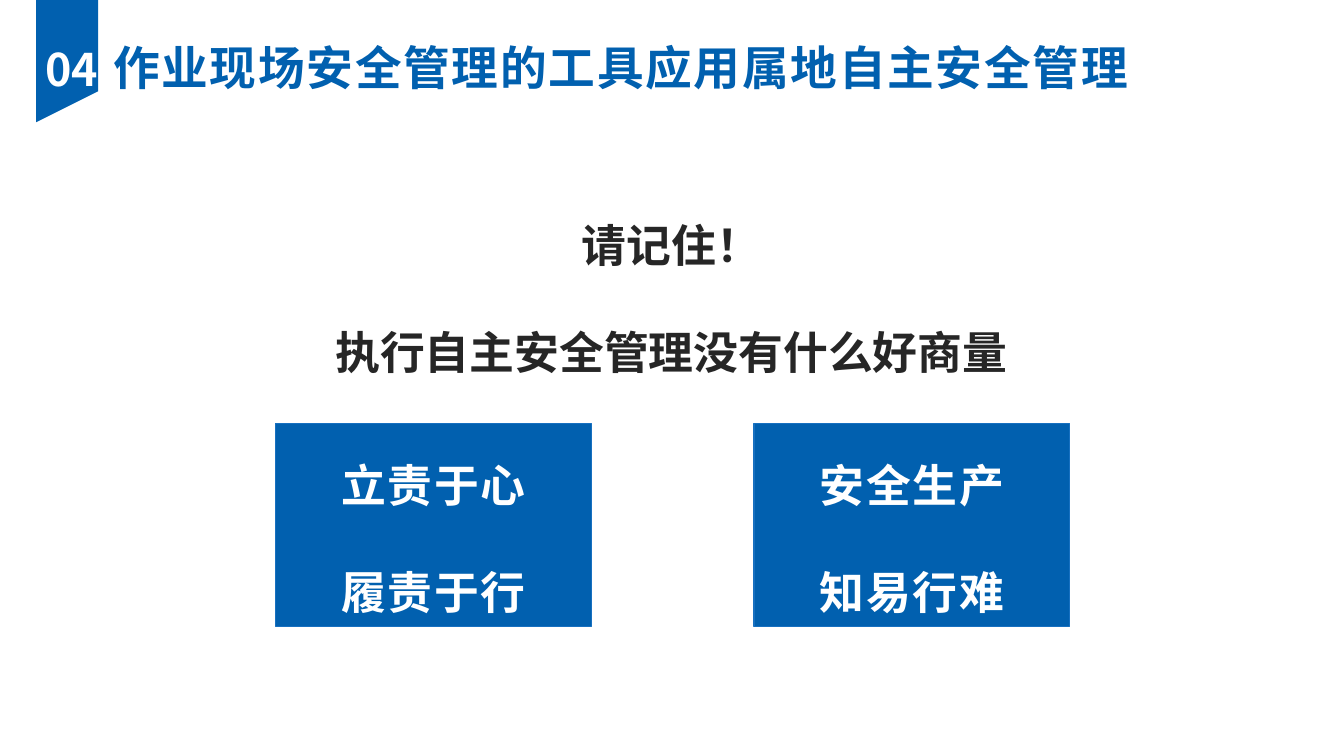
import pptx
import pptx.util
import pptx.dml.color
import pptx.enum.shapes
import pptx.enum.text
import pptx.oxml.ns
import lxml.etree

Inches = pptx.util.Inches
FONT = "Noto Sans CJK SC"
COLORS = {"blue": "0160AF", "edge": "1770C0", "dark": "262626", "white": "FFFFFF"}


def color(name):
    return pptx.dml.color.RGBColor.from_string(COLORS[name])


def write(shape, lines, tint, size=24, gap=0, wrap=True):
    frame = shape.text_frame
    frame.word_wrap = wrap
    frame.auto_size = pptx.enum.text.MSO_AUTO_SIZE.SHAPE_TO_FIT_TEXT
    for i, (text, space) in enumerate(lines):
        para = frame.add_paragraph() if i else frame.paragraphs[0]
        para.text = text
        para.alignment = pptx.enum.text.PP_ALIGN.CENTER
        para.line_spacing = space
        font = para.font
        font.name = FONT
        font.size = pptx.util.Pt(size)
        font.bold = True
        font.color.rgb = color(tint)
        props = para._p.pPr.find(pptx.oxml.ns.qn("a:defRPr"))
        face = lxml.etree.Element(pptx.oxml.ns.qn("a:ea"), typeface=FONT)
        props.find(pptx.oxml.ns.qn("a:latin")).addnext(face)
        if gap:
            props.set("spc", str(gap * 100))


deck = pptx.Presentation()
deck.slide_width = Inches(10)
deck.slide_height = Inches(10) * 9 // 16
slide = deck.slides.add_slide(deck.slide_layouts[6])
shapes = slide.shapes

pen = shapes.build_freeform(Inches(0.27), Inches(-0.02))
points = [(0.73, -0.02), (0.73, 0.68), (0.27, 0.91)]
pen.add_line_segments([(Inches(x), Inches(y)) for x, y in points], close=True)
flag = pen.convert_to_shape()
flag.shadow.inherit = False
flag.fill.solid()
flag.fill.fore_color.rgb = color("blue")
flag.line.fill.background()

number = shapes.add_textbox(Inches(0.18), Inches(0.26), Inches(0.71), Inches(0.5))
write(number, [("04", 1.0)], "white")

title = shapes.add_textbox(Inches(0.73), Inches(0.24), Inches(7.78), Inches(0.52))
write(title, [("作业现场安全管理的工具应用属地自主安全管理", 1.0)], "blue", 25, 1, False)

slogan = shapes.add_textbox(Inches(2.28), Inches(1.17), Inches(5.43), Inches(1.72))
write(slogan, [("请记住！", 2.0), ("执行自主安全管理没有什么好商量", 2.0)], "dark")

cards = [(2.05, "立责于心", "履责于行", 1), (5.61, "安全生产", "知易行难", 0)]
for left, top, low, after in cards:
    card = shapes.add_shape(
        pptx.enum.shapes.MSO_SHAPE.RECTANGLE,
        Inches(left), Inches(3.15), Inches(2.35), Inches(1.51),
    )
    card.shadow.inherit = False
    card.fill.solid()
    card.fill.fore_color.rgb = color("blue")
    card.line.color.rgb = color("edge")
    card.line.width = pptx.util.Pt(0.75)
    card.text_frame.vertical_anchor = pptx.enum.text.MSO_ANCHOR.MIDDLE
    write(card, [(top, 1.5), (low, 2.0)], "white", gap=1)
    if after:
        card.text_frame.paragraphs[1].space_after = pptx.util.Pt(after)

deck.save("out.pptx")
